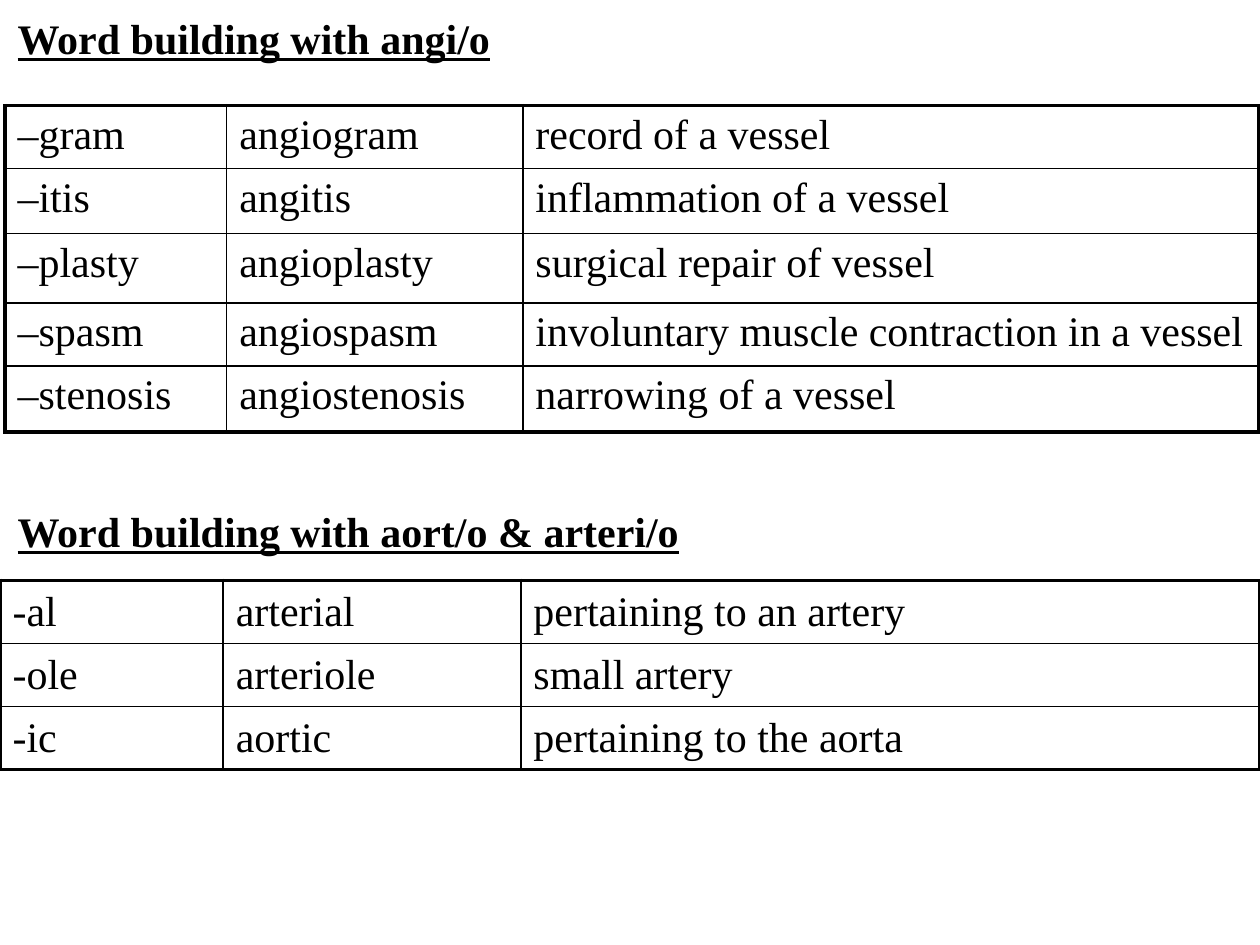
from lxml import etree
from pptx import Presentation
from pptx.dml.color import RGBColor
from pptx.enum.text import MSO_ANCHOR, MSO_AUTO_SIZE, PP_ALIGN
from pptx.oxml.ns import qn
from pptx.util import Cm, Pt

TOP, MIDDLE = MSO_ANCHOR.TOP, MSO_ANCHOR.MIDDLE
FIXED = MSO_AUTO_SIZE.NONE
LEFT = PP_ALIGN.LEFT
FACE, BLACK = "Times New Roman", "000000"
THICK, THIN = Pt(2.25), Pt(1)


def write(par, text, bold=False):
    """Add one run; bold text is also underlined."""
    run = par.add_run()
    run.text = text
    font = run.font
    font.name, font.size = FACE, Pt(24)
    font.bold = font.underline = bold
    font.color.rgb = RGBColor.from_string(BLACK)
    par.alignment = LEFT


def edge(cell, sides):
    """Draw the cell borders; sides maps each line tag to its width."""
    props = cell._tc.get_or_add_tcPr()
    for spot, (tag, width) in enumerate(sides.items()):
        line = etree.Element(qn(f"a:{tag}"), w=str(width))
        fill = etree.SubElement(line, qn("a:solidFill"))
        etree.SubElement(fill, qn("a:srgbClr"), val=BLACK)
        props.insert(spot, line)


prs = Presentation()
prs.slide_width, prs.slide_height = Cm(25.4), Cm(19.05)
slide = prs.slides.add_slide(prs.slide_layouts[5])

# Both headings
title = slide.shapes.title
title.left, title.top = Cm(0.1), Cm(0.13)
title.width, title.height = Cm(25.3), Cm(15.85)
frame = title.text_frame
frame.word_wrap = True
frame.auto_size = FIXED
frame.vertical_anchor = TOP
write(frame.paragraphs[0], "Word building with angi/o", bold=True)
second = frame.add_paragraph()
second.space_before = Cm(8.92)
write(second, "Word building with aort/o & arteri/o", bold=True)

# Word tables: left, top, column widths, row heights, anchor, words
tables = [
    (0.1, 2.13, (4.47, 5.97, 14.83), (1.27, 1.31, 1.4, 1.27, 1.33), TOP, [
        ("–gram", "angiogram", "record of a vessel"),
        ("–itis", "angitis", "inflammation of a vessel"),
        ("–plasty", "angioplasty", "surgical repair of vessel"),
        ("–spasm", "angiospasm", "involuntary muscle contraction in a vessel"),
        ("–stenosis", "angiostenosis", "narrowing of a vessel"),
    ]),
    (0, 11.7, (4.5, 6, 14.9), (1.27,) * 3, MIDDLE, [
        ("-al", "arterial", "pertaining to an artery"),
        ("-ole", "arteriole", "small artery"),
        ("-ic", "aortic", "pertaining to the aorta"),
    ]),
]
for left, top, widths, heights, anchor, words in tables:
    table = slide.shapes.add_table(
        len(heights), len(widths), Cm(left), Cm(top),
        Cm(sum(widths)), Cm(sum(heights))).table
    table.first_row = table.horz_banding = False
    for col, width in zip(table.columns, widths):
        col.width = Cm(width)
    for r, (height, row) in enumerate(zip(heights, words)):
        table.rows[r].height = Cm(height)
        for c, word in enumerate(row):
            cell = table.cell(r, c)
            cell.fill.background()
            cell.vertical_anchor = anchor
            write(cell.text_frame.paragraphs[0], word)
            edge(cell, {
                "lnL": THICK if c == 0 else THIN,
                "lnR": THICK if c == len(widths) - 1 else THIN,
                "lnT": THICK if r == 0 else THIN,
                "lnB": THICK if r == len(heights) - 1 else THIN,
            })

prs.save("out.pptx")
